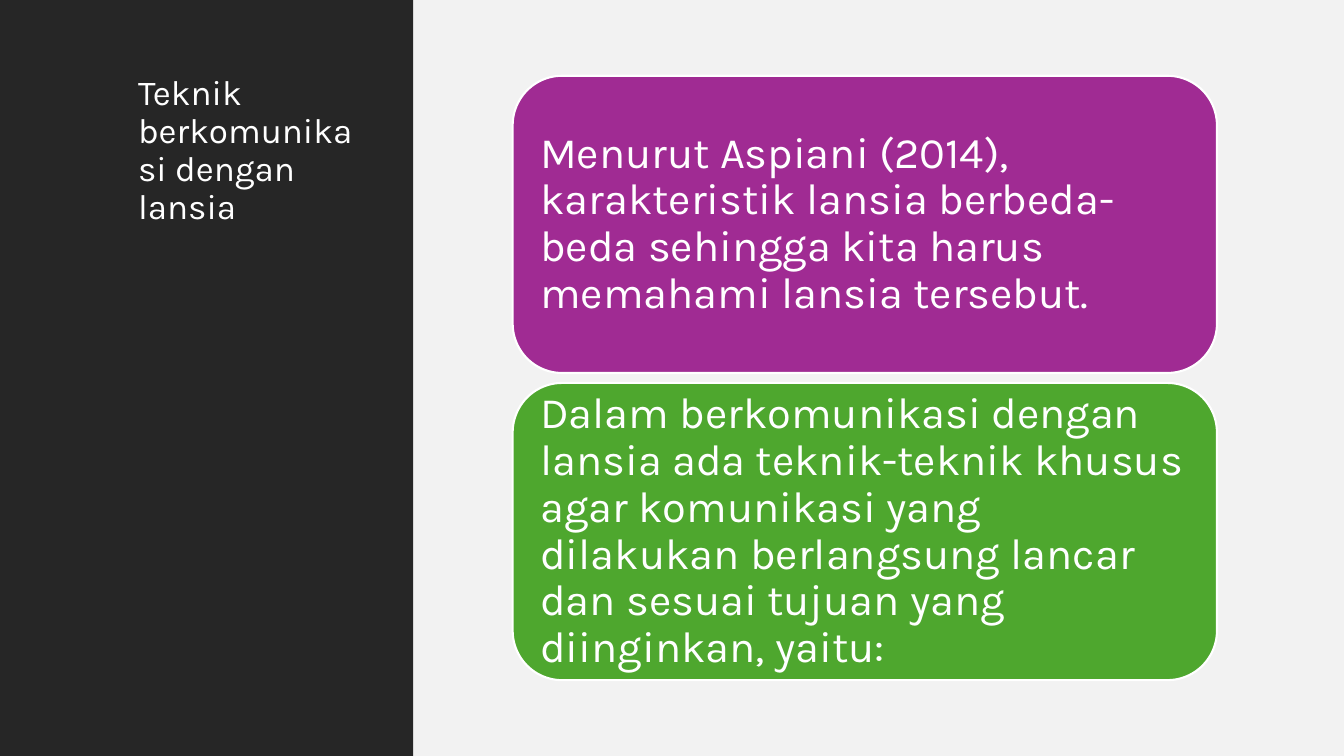
from dataclasses import dataclass

from pptx import Presentation
from pptx.dml.color import RGBColor
from pptx.enum.shapes import MSO_SHAPE
from pptx.enum.text import MSO_ANCHOR, PP_ALIGN
from pptx.util import Cm, Pt


@dataclass(frozen=True)
class Theme:
    font: str = "Karla"
    white: str = "FFFFFF"
    canvas: str = "F2F2F2"
    sidebar: str = "262626"
    purple: str = "A02B93"
    green: str = "4EA72E"
    title_size: int = 25
    body_size: int = 31
    outline: float = 1.5


class SlideBuilder:
    def __init__(self, s, theme):
        self.s = s
        self.theme = theme

    def shape(self, kind, box, color):
        sp = self.s.shapes.add_shape(kind, *map(Cm, box))
        sp.shadow.inherit = False
        sp.fill.solid()
        sp.fill.fore_color.rgb = RGBColor.from_string(color)
        sp.line.fill.background()
        return sp

    def panel(self, box, color):
        return self.shape(MSO_SHAPE.RECTANGLE, box, color)

    def add_text(self, sp, text, size, anchor):
        tf = sp.text_frame
        tf.word_wrap = True
        tf.vertical_anchor = anchor
        p = tf.paragraphs[0]
        p.alignment = PP_ALIGN.LEFT
        p.line_spacing = 0.9
        r = p.add_run()
        r.text = text
        r.font.name = self.theme.font
        r.font.size = Pt(size)
        r.font.color.rgb = RGBColor.from_string(self.theme.white)
        return tf

    def title(self, box, text):
        sp = self.s.shapes.add_textbox(*map(Cm, box))
        self.add_text(sp, text, self.theme.title_size, MSO_ANCHOR.TOP)

    def card(self, box, color, text):
        sp = self.shape(MSO_SHAPE.ROUNDED_RECTANGLE, box, color)
        sp.line.color.rgb = RGBColor.from_string(self.theme.white)
        sp.line.width = Pt(self.theme.outline)
        tf = self.add_text(sp, text, self.theme.body_size, MSO_ANCHOR.MIDDLE)
        tf.margin_left = tf.margin_right = Cm(0.33)
        tf.margin_top = tf.margin_bottom = Cm(0.33)


def main():
    prs = Presentation()
    prs.slide_width, prs.slide_height = Cm(33.87), Cm(19.05)
    theme = Theme()
    slide = SlideBuilder(prs.slides.add_slide(prs.slide_layouts[6]), theme)

    slide.panel((10.39, 0, 23.48, 19.05), theme.canvas)
    slide.panel((0, 0, 10.41, 19.05), theme.sidebar)
    slide.title((3.23, 1.78, 6.1, 15.49), "Teknik berkomunikasi dengan lansia")

    cards = [
        (theme.purple,
         "Menurut Aspiani (2014), karakteristik lansia berbeda-beda "
         "sehingga kita harus memahami lansia tersebut."),
        (theme.green,
         "Dalam berkomunikasi dengan lansia ada teknik-teknik khusus agar "
         "komunikasi yang dilakukan berlangsung lancar dan sesuai tujuan "
         "yang diinginkan, yaitu:"),
    ]
    top, height, gap = 1.91, 7.49, 0.25
    for i, (color, text) in enumerate(cards):
        slide.card((12.92, top + i * (height + gap), 17.75, height), color, text)

    prs.save("out.pptx")


if __name__ == "__main__":
    main()
